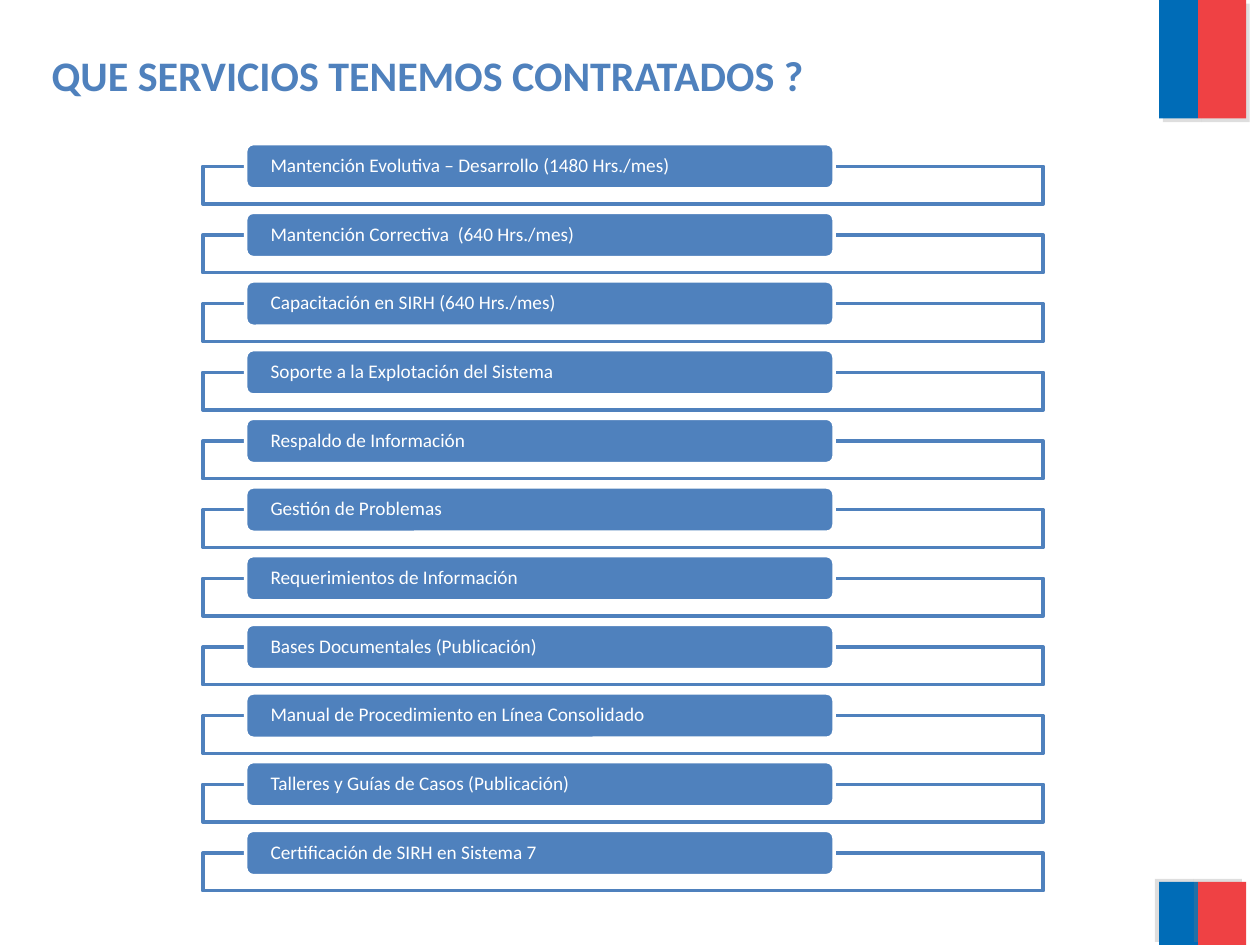
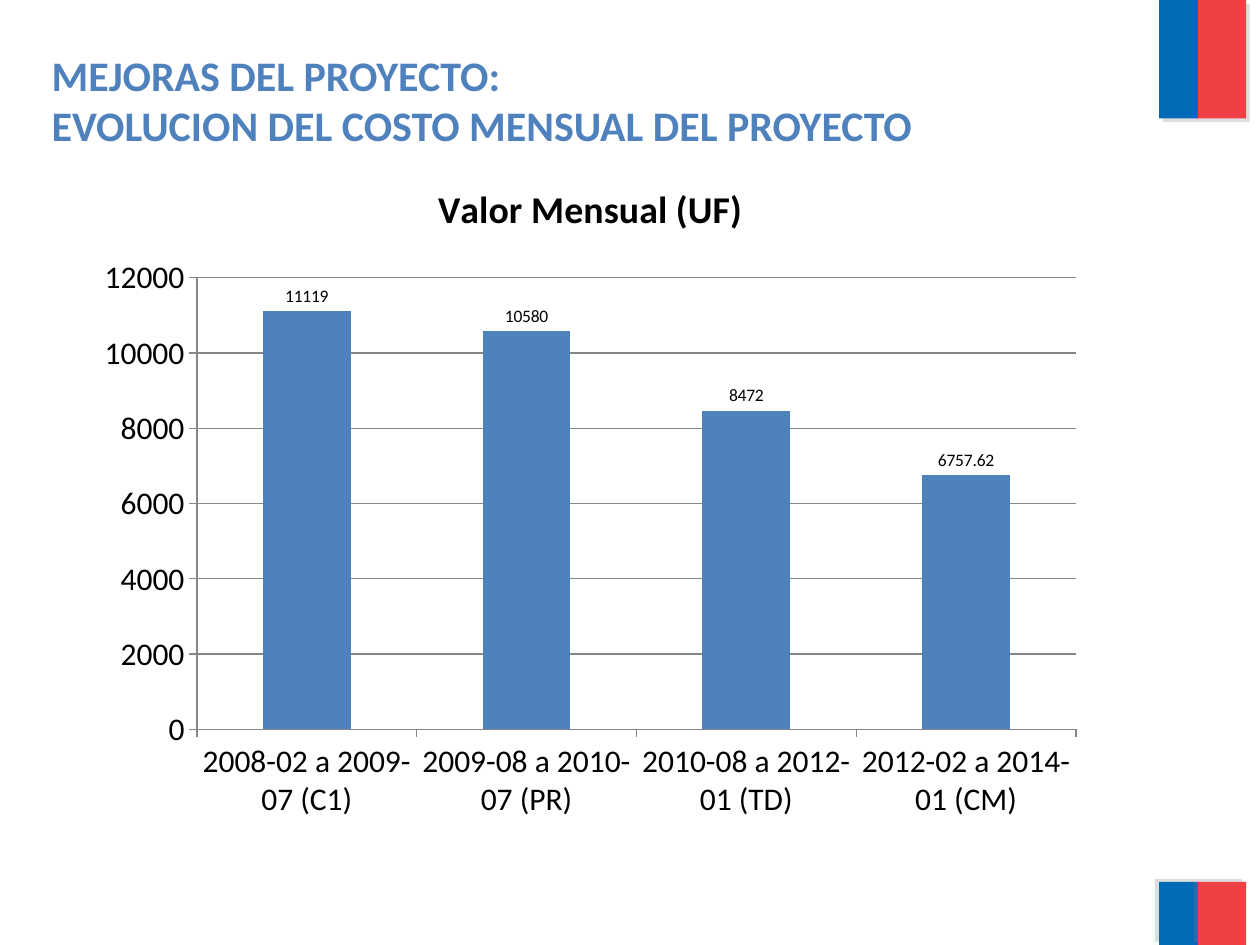
from dataclasses import dataclass

from lxml.etree import SubElement
from pptx import Presentation
from pptx.chart.data import CategoryChartData
from pptx.dml.color import RGBColor
from pptx.enum.chart import XL_CHART_TYPE, XL_LABEL_POSITION, XL_TICK_MARK
from pptx.enum.shapes import MSO_SHAPE
from pptx.enum.text import MSO_ANCHOR, PP_ALIGN
from pptx.oxml.ns import qn
from pptx.util import Inches, Pt

FONT = "Calibri"
BLUE = RGBColor(0x4F, 0x81, 0xBD)
FLAG_BLUE = RGBColor(0x00, 0x6C, 0xB7)
FLAG_RED = RGBColor(0xEF, 0x41, 0x44)
WHITE = RGBColor(0xFF, 0xFF, 0xFF)
BLACK = RGBColor(0x00, 0x00, 0x00)
GRAY = RGBColor(0x86, 0x86, 0x86)
TITLE_ONLY = 5

SERVICES = [
    "Mantención Evolutiva – Desarrollo (1480 Hrs./mes)",
    "Mantención Correctiva  (640 Hrs./mes)",
    "Capacitación en SIRH (640 Hrs./mes)",
    "Soporte a la Explotación del Sistema",
    "Respaldo de Información",
    "Gestión de Problemas",
    "Requerimientos de Información",
    "Bases Documentales (Publicación)",
    "Manual de Procedimiento en Línea Consolidado",
    "Talleres y Guías de Casos (Publicación)",
    "Certificación de SIRH en Sistema 7",
]
FIRST_LABEL_TOP = 1.14
LAST_LABEL_TOP = 6.59

COST_TITLE = "Valor Mensual (UF)"
MONTHLY_COSTS = {
    "2008-02 a 2009-07 (C1)": 11119,
    "2009-08 a 2010-07 (PR)": 10580,
    "2010-08 a 2012-01 (TD)": 8472,
    "2012-02 a 2014-01 (CM)": 6757.62,
}


@dataclass(frozen=True)
class Band:
    left: float
    top: float
    width: float
    height: float
    color: RGBColor
    shadow_angle: int


BANDS = [
    Band(9.2, -0.01, 0.31, 0.95, FLAG_BLUE, 45),
    Band(9.51, 0, 0.38, 0.94, FLAG_RED, 45),
    Band(9.2, 7, 0.31, 0.5, FLAG_BLUE, 215),
    Band(9.51, 7, 0.38, 0.5, FLAG_RED, 215),
]


def format_font(font, size: float, color: RGBColor, bold: bool = False) -> None:
    font.name = FONT
    font.size = Pt(size)
    font.bold = bold
    font.color.rgb = color


def write_text(shape, text: str, *, size: float, color: RGBColor, bold: bool = False,
               anchor=MSO_ANCHOR.TOP, side_inset: float = 0.1, end_inset: float = 0.05,
               line_spacing: float = 1.0) -> None:
    frame = shape.text_frame
    frame.word_wrap = True
    frame.vertical_anchor = anchor
    frame.margin_left = frame.margin_right = Inches(side_inset)
    frame.margin_top = frame.margin_bottom = Inches(end_inset)
    frame.text = text
    for paragraph in frame.paragraphs:
        paragraph.alignment = PP_ALIGN.LEFT
        paragraph.line_spacing = line_spacing
        for run in paragraph.runs:
            format_font(run.font, size, color, bold)


def add_box(slide, kind, left: float, top: float, width: float, height: float, *,
            fill: RGBColor, line: RGBColor | None = None):
    shape = slide.shapes.add_shape(
        kind, Inches(left), Inches(top), Inches(width), Inches(height))
    shape.shadow.inherit = False
    shape.fill.solid()
    shape.fill.fore_color.rgb = fill
    if line is None:
        shape.line.fill.background()
    else:
        shape.line.color.rgb = line
        shape.line.width = Pt(2)
    return shape


def add_shadow(shape, angle: int) -> None:
    effects = shape.element.spPr.find(qn("a:effectLst"))
    shadow = SubElement(effects, qn("a:outerShdw"), blurRad="0", dist=str(Pt(3)),
                        dir=str(angle * 60000), algn="ctr", rotWithShape="0")
    color = SubElement(shadow, qn("a:srgbClr"), val="808080")
    SubElement(color, qn("a:alpha"), val="25000")


def add_titled_slide(presentation, title: str, title_height: float):
    slide = presentation.slides.add_slide(presentation.slide_layouts[TITLE_ONLY])
    for band in BANDS:
        shape = add_box(slide, MSO_SHAPE.RECTANGLE, band.left, band.top,
                        band.width, band.height, fill=band.color)
        add_shadow(shape, band.shadow_angle)
    heading = slide.shapes.title
    heading.left, heading.top = Inches(0.31), Inches(0.34)
    heading.width, heading.height = Inches(9.14), Inches(title_height)
    write_text(heading, title, size=24, color=BLUE, bold=True)
    return slide


def add_service(slide, name: str, top: float) -> None:
    add_box(slide, MSO_SHAPE.RECTANGLE, 1.61, top + 0.18, 6.67, 0.3, fill=WHITE, line=BLUE)
    label = add_box(slide, MSO_SHAPE.ROUNDED_RECTANGLE, 1.95, top, 4.67, 0.36,
                    fill=BLUE, line=WHITE)
    write_text(label, name, size=11, color=WHITE, anchor=MSO_ANCHOR.MIDDLE,
               side_inset=0.18, end_inset=0, line_spacing=0.9)


def add_services_slide(presentation) -> None:
    slide = add_titled_slide(presentation, "QUE SERVICIOS TENEMOS CONTRATADOS ?", 0.5)
    step = (LAST_LABEL_TOP - FIRST_LABEL_TOP) / (len(SERVICES) - 1)
    for index, service in enumerate(SERVICES):
        add_service(slide, service, FIRST_LABEL_TOP + index * step)


def add_cost_chart(slide) -> None:
    data = CategoryChartData()
    data.categories = list(MONTHLY_COSTS)
    data.add_series(COST_TITLE, list(MONTHLY_COSTS.values()))
    chart = slide.shapes.add_chart(
        XL_CHART_TYPE.COLUMN_CLUSTERED, Inches(0.67), Inches(1.23),
        Inches(8.03), Inches(5.37), data).chart
    format_font(chart.font, 18, BLACK)
    chart.has_legend = False
    chart.has_title = True
    chart.chart_title.include_in_layout = False
    chart.chart_title.text_frame.text = COST_TITLE
    title_run = chart.chart_title.text_frame.paragraphs[0].runs[0]
    format_font(title_run.font, 21.6, BLACK, bold=True)

    for axis in (chart.category_axis, chart.value_axis):
        axis.major_tick_mark = XL_TICK_MARK.OUTSIDE
        axis.minor_tick_mark = XL_TICK_MARK.NONE
        axis.format.line.color.rgb = GRAY
        format_font(axis.tick_labels.font, 18, BLACK)
    chart.value_axis.minimum_scale = 0
    chart.value_axis.maximum_scale = 12000
    chart.value_axis.major_unit = 2000
    chart.value_axis.major_gridlines.format.line.color.rgb = GRAY

    plot = chart.plots[0]
    plot.gap_width = 150
    plot.vary_by_categories = False
    fill = plot.series[0].format.fill
    fill.solid()
    fill.fore_color.rgb = BLUE
    plot.has_data_labels = True
    labels = plot.data_labels
    labels.show_value = True
    labels.position = XL_LABEL_POSITION.OUTSIDE_END
    format_font(labels.font, 10, BLACK)


def add_costs_slide(presentation) -> None:
    slide = add_titled_slide(
        presentation,
        "MEJORAS DEL PROYECTO:\nEVOLUCION DEL COSTO MENSUAL DEL PROYECTO", 0.91)
    add_cost_chart(slide)


def main() -> None:
    presentation = Presentation()
    presentation.slide_width = Inches(10)
    presentation.slide_height = Inches(7.5)
    add_services_slide(presentation)
    add_costs_slide(presentation)
    presentation.save("out.pptx")


if __name__ == "__main__":
    main()
